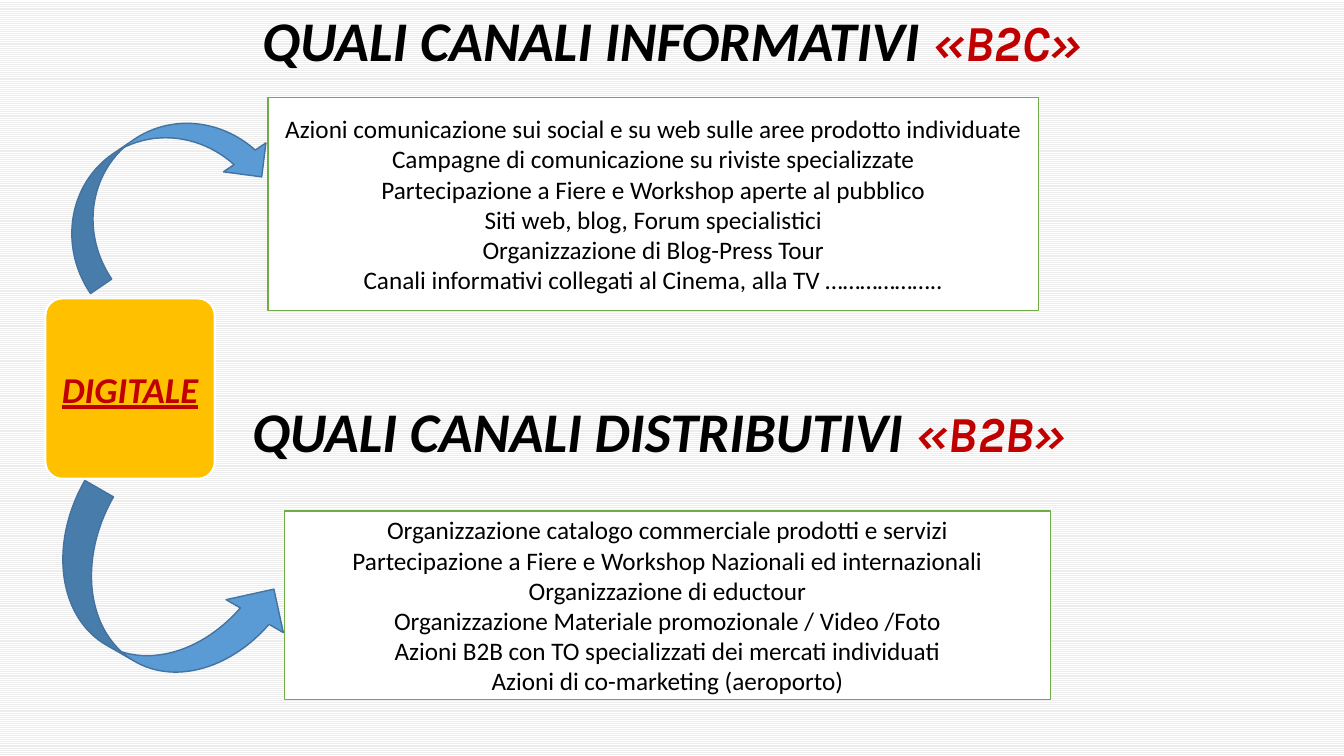
from lxml import etree
from pptx import Presentation
from pptx import util as u
from pptx.dml.color import RGBColor
from pptx.enum import dml, shapes, text
from pptx.oxml import ns

PX = 9144
BLACK = RGBColor(0x00, 0x00, 0x00)
WHITE = RGBColor(0xFF, 0xFF, 0xFF)
STRIPE = RGBColor(0xED, 0xED, 0xED)
RED = RGBColor(0xC0, 0x00, 0x00)
GREEN = RGBColor(0x70, 0xAD, 0x47)
AMBER = RGBColor(0xFF, 0xC0, 0x00)
BLUE = RGBColor(0x5B, 0x9B, 0xD5)
DARK_BLUE = RGBColor(0x43, 0x73, 0x9E)

HEADING = dict(name="Calibri", size=u.Pt(40), bold=True, italic=True)
TAG = dict(name="Karla", size=u.Pt(36), bold=True, italic=True)
ITEM = dict(name="Calibri", size=u.Pt(18), bold=False, italic=False)
HUB = dict(name="Calibri", size=u.Pt(26), bold=True, italic=True, underline=True)

INFO_CHANNELS = [
    "Azioni comunicazione sui social e su web sulle aree prodotto individuate",
    "Campagne di comunicazione su riviste specializzate",
    "Partecipazione a Fiere e Workshop aperte al pubblico",
    "Siti web, blog, Forum specialistici",
    "Organizzazione di Blog-Press Tour",
    "Canali informativi collegati al Cinema, alla TV ………………..",
]
SALES_CHANNELS = [
    "Organizzazione catalogo commerciale prodotti e servizi",
    "Partecipazione a Fiere e Workshop Nazionali ed internazionali",
    "Organizzazione di eductour",
    "Organizzazione Materiale promozionale / Video /Foto",
    "Azioni B2B con TO specializzati dei mercati individuati",
    "Azioni di co-marketing (aeroporto)",
]


def place(sp, box):
    for key, value in zip(("left", "top", "width", "height"), box):
        setattr(sp, key, value * PX)


def paint(sp, fill, line, width):
    sp.fill.solid()
    sp.fill.fore_color.rgb = fill
    sp.line.color.rgb = line
    sp.line.width = u.Pt(width)


def frame(sp, anchor):
    tf = sp.text_frame
    for key, value in dict(word_wrap=True, auto_size=text.MSO_AUTO_SIZE.NONE,
                           vertical_anchor=anchor).items():
        setattr(tf, key, value)
    return tf


def add_run(p, words, style, color):
    p.alignment = text.PP_ALIGN.CENTER
    r = p.add_run()
    r.text = words
    for key, value in style.items():
        setattr(r.font, key, value)
    r.font.color.rgb = color


def heading(sp, box, words, tag):
    place(sp, box)
    p = frame(sp, text.MSO_ANCHOR.TOP).paragraphs[0]
    add_run(p, words, HEADING, BLACK)
    add_run(p, tag, TAG, RED)


def channel_list(sp, box, items):
    place(sp, box)
    paint(sp, WHITE, GREEN, 1)
    tf = frame(sp, text.MSO_ANCHOR.MIDDLE)
    for i, item in enumerate(items):
        p = tf.add_paragraph() if i else tf.paragraphs[0]
        pPr = p._p.get_or_add_pPr()
        pPr.set("marL", "0")
        pPr.set("indent", "0")
        etree.SubElement(pPr, ns.qn("a:buNone"))
        p.space_before = u.Pt(0)
        add_run(p, item, ITEM, BLACK)


def add_shape(s, kind, box, fill, line, width):
    sp = s.shapes.add_shape(kind, *(v * PX for v in box))
    sp.shadow.inherit = False
    paint(sp, fill, line, width)
    return sp


def digital_hub(s, box):
    x, y, w, h = box
    sp = add_shape(s, shapes.MSO_SHAPE.ROUNDED_RECTANGLE, box, AMBER, WHITE, 1.5)
    sp.adjustments[0] = 0.1
    tf = frame(sp, text.MSO_ANCHOR.MIDDLE)
    for side in ("left", "top", "right", "bottom"):
        setattr(tf, f"margin_{side}", 7 * PX)
    add_run(tf.paragraphs[0], "DIGITALE", HUB, RED)
    for kind, arrow_box, angle in (
        (shapes.MSO_SHAPE.CURVED_DOWN_ARROW, (x - 4, y - 163, 231, 102), 325.7),
        (shapes.MSO_SHAPE.CURVED_UP_ARROW, (x - 10, y + h + 55, 249, 131), 29.9),
    ):
        add_shape(s, kind, arrow_box, BLUE, DARK_BLUE, 1).rotation = angle


def main():
    prs = Presentation()
    prs.slide_width, prs.slide_height = 1333 * PX, 750 * PX
    s = prs.slides.add_slide(prs.slide_layouts.get_by_name("Two Content"))
    fill = s.background.fill
    fill.patterned()
    fill.pattern = dml.MSO_PATTERN.LIGHT_HORIZONTAL
    fill.fore_color.rgb = STRIPE
    fill.back_color.rgb = WHITE

    title, info, sales = list(s.placeholders)[:3]
    heading(title, (0, 0, 1333, 77), "QUALI CANALI INFORMATIVI ", "«B2C»")
    heading(s.shapes.add_textbox(0, 0, PX, PX), (0, 388, 1307, 77),
            "QUALI CANALI DISTRIBUTIVI ", "«B2B»")
    channel_list(info, (266, 97, 764, 211), INFO_CHANNELS)
    channel_list(sales, (282, 507, 760, 187), SALES_CHANNELS)
    digital_hub(s, (45, 296, 168, 179))
    prs.save("out.pptx")


if __name__ == "__main__":
    main()
